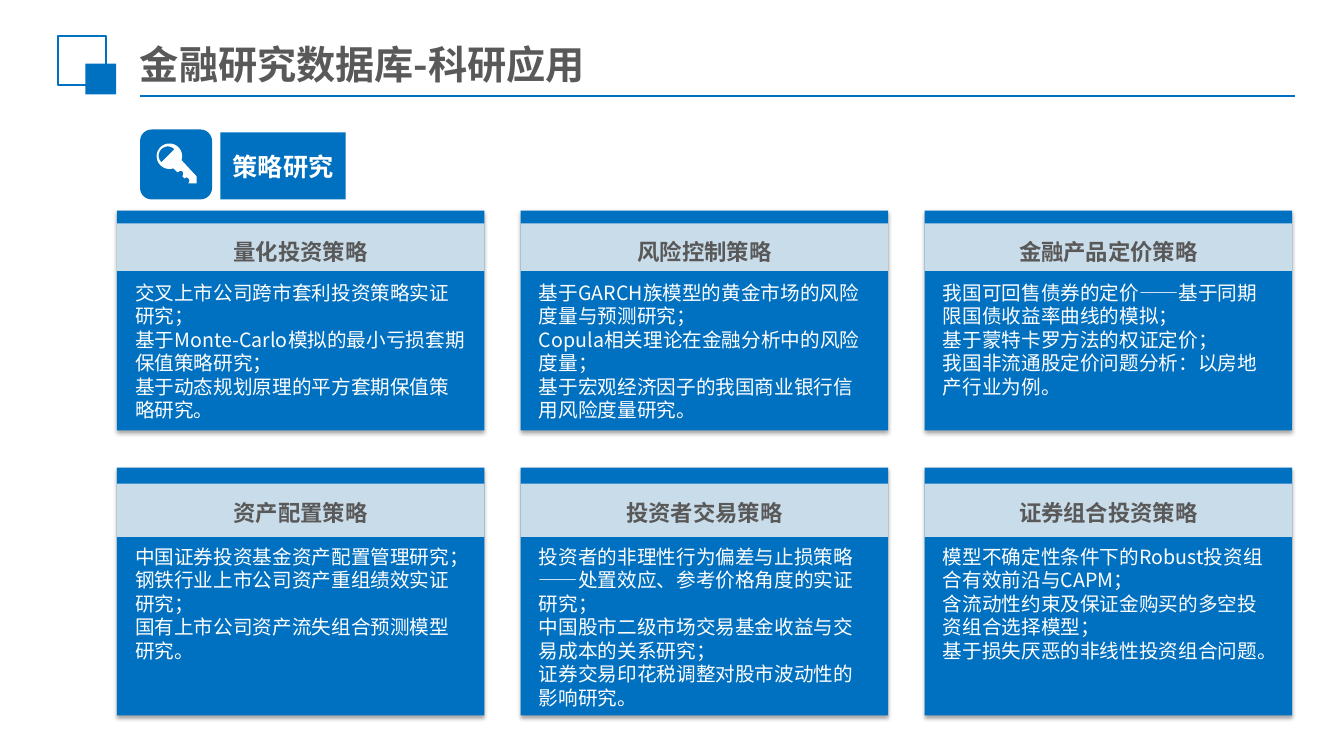
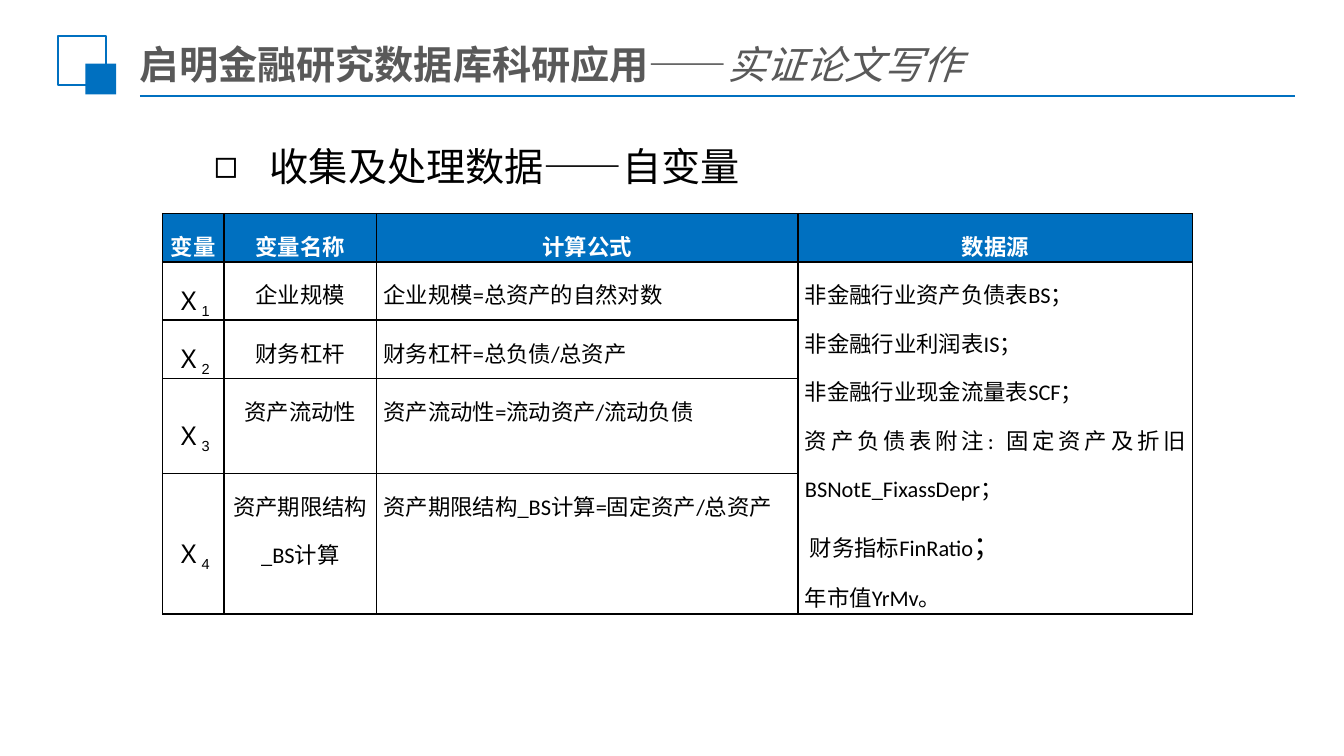
"""Build two slides on research uses of a financial database."""
from dataclasses import dataclass
from math import cos, radians, sin

from lxml.etree import SubElement
from pptx import Presentation
from pptx.dml.color import RGBColor
from pptx.enum.shapes import MSO_CONNECTOR, MSO_SHAPE
from pptx.enum.text import MSO_ANCHOR, MSO_AUTO_SIZE, PP_ALIGN
from pptx.oxml.ns import qn
from pptx.util import Pt


@dataclass(frozen=True)
class Theme:
    blue: RGBColor = RGBColor(0x00, 0x70, 0xC0)
    grey: RGBColor = RGBColor(0x59, 0x59, 0x59)
    pale: RGBColor = RGBColor(0xF2, 0xF2, 0xF2)
    white: RGBColor = RGBColor(0xFF, 0xFF, 0xFF)
    black: RGBColor = RGBColor(0x00, 0x00, 0x00)
    chinese: str = "Noto Sans CJK SC"
    serif: str = "Times New Roman"
    table: str = "Calibri"
    symbol: str = "Arial"
    title_size: int = 28
    label_size: int = 18
    heading_size: int = 16
    body_size: int = 14
    emphasis_size: int = 20


theme = Theme()


def add_run(paragraph, text, size, color, bold=False, italic=False, font=theme.chinese):
    run = paragraph.add_run()
    run.text = text
    run.font.size = Pt(size)
    run.font.bold = bold
    run.font.italic = italic
    run.font.color.rgb = color
    run.font.name = font
    SubElement(run.font._element, qn("a:ea")).set("typeface", theme.chinese)
    return run


def add_block(slide, kind, left, top, width, height, fill=None):
    shape = slide.shapes.add_shape(kind, Pt(left), Pt(top), Pt(width), Pt(height))
    shape.shadow.inherit = False
    shape.line.fill.background()
    if fill is None:
        shape.fill.background()
    else:
        shape.fill.solid()
        shape.fill.fore_color.rgb = fill
    shape.text_frame.word_wrap = True
    return shape


presentation = Presentation()
presentation.slide_width = Pt(960)
presentation.slide_height = Pt(540)
master = presentation.slide_master
strategy_slide = presentation.slides.add_slide(presentation.slide_layouts[5])
variable_slide = presentation.slides.add_slide(presentation.slide_layouts[1])

master_title = master.placeholders[0]
master_title.left, master_title.top = Pt(95), Pt(28)
master_title.width, master_title.height = Pt(619), Pt(35)
master_title.text_frame.auto_size = MSO_AUTO_SIZE.NONE
master_title.text_frame.vertical_anchor = MSO_ANCHOR.MIDDLE
master_title.text_frame.margin_left = master_title.text_frame.margin_right = Pt(5)
master_title.text_frame.margin_top = master_title.text_frame.margin_bottom = Pt(3)

rule = strategy_slide.shapes.add_connector(
    MSO_CONNECTOR.STRAIGHT, Pt(100), Pt(68.6), Pt(925), Pt(68.6))
rule.line.color.rgb = theme.blue
rule.line.width = Pt(1.25)
SubElement(rule.element.spPr, qn("a:effectLst"))
outline_square = add_block(strategy_slide, MSO_SHAPE.RECTANGLE, 41.5, 26, 34.5, 35)
outline_square.line.color.rgb = theme.blue
outline_square.line.width = Pt(1.5)
solid_square = add_block(strategy_slide, MSO_SHAPE.RECTANGLE, 61, 45.5, 22, 22, theme.blue)
for number, shape in enumerate((rule, outline_square, solid_square), 101):
    shape.element.xpath(".//p:cNvPr")[0].set("id", str(number))
    master.shapes.element.append(shape.element)

titles = [
    (strategy_slide, [("金融研究数据库-科研应用", True, False, theme.chinese)]),
    (variable_slide, [("启明金融研究数据库科研应用", True, False, theme.chinese),
                      ("——", False, False, theme.chinese),
                      ("实证论文写作", False, True, theme.serif)]),
]
for slide, runs in titles:
    paragraph = slide.shapes.title.text_frame.paragraphs[0]
    paragraph.alignment = PP_ALIGN.LEFT
    for text, bold, italic, font in runs:
        add_run(paragraph, text, theme.title_size, theme.grey, bold, italic, font)

label = add_block(strategy_slide, MSO_SHAPE.RECTANGLE, 157.5, 94.5, 89.5, 48, theme.blue)
label.text_frame.margin_left = label.text_frame.margin_right = Pt(0)
label.text_frame.paragraphs[0].alignment = PP_ALIGN.CENTER
add_run(label.text_frame.paragraphs[0], "策略研究", theme.label_size, theme.white, True)
add_block(strategy_slide, MSO_SHAPE.ROUNDED_RECTANGLE, 100, 92.5, 51.5, 50, theme.blue)

key_head = [(121 + 9.1 * cos(radians(angle)), 111.6 + 9.1 * sin(radians(angle)))
            for angle in range(18, -289, -9)]
key_shaft = [(126.7, 123.1), (128.9, 121.9), (130.3, 122.4), (131, 123.8),
             (130.3, 126), (131.8, 127.4), (133.2, 126.7), (134.6, 127.4),
             (135.4, 128.9), (134.6, 131), (140.4, 131), (140.4, 126)]
key_hole = [(119.9 + 6.6 * cos(radians(angle)), 111.2 + 6.6 * sin(radians(angle)))
            for angle in range(-225, -44, 9)]
key_outline, key_gap = [[(Pt(x), Pt(y)) for x, y in points]
                        for points in (key_head + key_shaft, key_hole)]
builder = strategy_slide.shapes.build_freeform(*key_outline[0])
builder.add_line_segments(key_outline[1:], close=True)
builder.move_to(*key_gap[0])
builder.add_line_segments(key_gap[1:], close=True)
key = builder.convert_to_shape()
key.shadow.inherit = False
key.fill.solid()
key.fill.fore_color.rgb = theme.white
key.line.fill.background()

card_rows = [
    (150.5, 157, 9, 34, 50, [
        ("量化投资策略", ["交叉上市公司跨市套利投资策略实证研究；",
                    "基于Monte-Carlo模拟的最小亏损套期保值策略研究；",
                    "基于动态规划原理的平方套期保值策略研究。"]),
        ("风险控制策略", ["基于GARCH族模型的黄金市场的风险度量与预测研究；",
                    "Copula相关理论在金融分析中的风险度量；",
                    "基于宏观经济因子的我国商业银行信用风险度量研究。"]),
        ("金融产品定价策略", ["我国可回售债券的定价——基于同期限国债收益率曲线的模拟；",
                      "基于蒙特卡罗方法的权证定价；",
                      "我国非流通股定价问题分析：以房地产行业为例。"]),
    ]),
    (334, 177, 11.5, 38, 55, [
        ("资产配置策略", ["中国证券投资基金资产配置管理研究；",
                    "钢铁行业上市公司资产重组绩效实证研究；",
                    "国有上市公司资产流失组合预测模型研究。"]),
        ("投资者交易策略", ["投资者的非理性行为偏差与止损策略——处置效应、参考价格角度的实证研究；",
                     "中国股市二级市场交易基金收益与交易成本的关系研究；",
                     "证券交易印花税调整对股市波动性的影响研究。"]),
        ("证券组合投资策略", ["模型不确定性条件下的Robust投资组合有效前沿与CAPM；",
                      "含流动性约束及保证金购买的多空投资组合选择模型；",
                      "基于损失厌恶的非线性投资组合问题。"]),
    ]),
]
card_width, card_step = 262.5, 288.5
for top, height, band_offset, band_height, text_offset, cards in card_rows:
    for column, (heading, topics) in enumerate(cards):
        left = 83.5 + column * card_step
        card = add_block(strategy_slide, MSO_SHAPE.RECTANGLE,
                         left, top, card_width, height, theme.blue)
        effects = card.element.spPr.find(qn("a:effectLst"))
        shadow = SubElement(effects, qn("a:outerShdw"), blurRad=str(Pt(3.1)),
                            dist=str(Pt(1.8)), dir="5400000", rotWithShape="0")
        shadow_color = SubElement(shadow, qn("a:srgbClr"), val=str(theme.black))
        SubElement(shadow_color, qn("a:alpha"), val="35000")
        frame = card.text_frame
        frame.vertical_anchor = MSO_ANCHOR.TOP
        frame.margin_left = frame.margin_right = Pt(13)
        frame.margin_top, frame.margin_bottom = Pt(text_offset), Pt(0)
        for index, topic in enumerate(topics):
            paragraph = frame.add_paragraph() if index else frame.paragraphs[0]
            paragraph.alignment = PP_ALIGN.LEFT
            paragraph.line_spacing = Pt(16.8)
            add_run(paragraph, topic, theme.body_size, theme.white)

        band = add_block(strategy_slide, MSO_SHAPE.RECTANGLE, left, top + band_offset,
                         card_width, band_height, theme.pale)
        band_color = band.element.spPr.find(qn("a:solidFill"))[0]
        SubElement(band_color, qn("a:alpha"), val="83000")
        band.text_frame.vertical_anchor = MSO_ANCHOR.TOP
        band.text_frame.margin_top = Pt(4)
        paragraph = band.text_frame.paragraphs[0]
        paragraph.alignment = PP_ALIGN.CENTER
        paragraph.line_spacing = Pt(26)
        add_run(paragraph, heading, theme.heading_size, theme.grey, True)

body = variable_slide.placeholders[1]
body.left, body.top, body.width, body.height = Pt(145.5), Pt(94.5), Pt(672.5), Pt(45)
body.text_frame.auto_size = MSO_AUTO_SIZE.NONE
paragraph = body.text_frame.paragraphs[0]
properties = paragraph._p.get_or_add_pPr()
properties.set("marL", str(Pt(40)))
properties.set("indent", str(Pt(-40)))
SubElement(properties, qn("a:buFont"), typeface=theme.symbol)
SubElement(properties, qn("a:buChar"), char="◻")
paragraph.space_before = Pt(0)
paragraph.line_spacing = Pt(37)
add_run(paragraph, "收集及处理数据——自变量", theme.title_size, theme.black)

headers = ["变量", "变量名称", "计算公式", "数据源"]
variables = [
    ("企业规模", "企业规模=总资产的自然对数"),
    ("财务杠杆", "财务杠杆=总负债/总资产"),
    ("资产流动性", "资产流动性=流动资产/流动负债"),
    ("资产期限结构_BS计算", "资产期限结构_BS计算=固定资产/总资产"),
]
sources = ["非金融行业资产负债表BS；", "非金融行业利润表IS；", "非金融行业现金流量表SCF；",
           "资产负债表附注: 固定资产及折旧 BSNotE_FixassDepr；",
           " 财务指标FinRatio", "年市值YrMv。"]
column_widths = [44, 109, 301, 282]
row_heights = [34.5, 41.5, 41.5, 68, 100.5]
table = variable_slide.shapes.add_table(
    len(row_heights), len(column_widths), Pt(116), Pt(152.5),
    Pt(sum(column_widths)), Pt(sum(row_heights))).table
table.first_row = False
table.horz_banding = False
for column, width in zip(table.columns, column_widths):
    column.width = Pt(width)
for row, height in zip(table.rows, row_heights):
    row.height = Pt(height)
table.cell(1, 3).merge(table.cell(4, 3))

for row_index in range(len(row_heights)):
    for column_index in range(len(column_widths)):
        cell = table.cell(row_index, column_index)
        cell.margin_left = cell.margin_right = Pt(5)
        cell.margin_top = cell.margin_bottom = Pt(0)
        for side in ("lnL", "lnR", "lnT", "lnB"):
            border = SubElement(cell._tc.get_or_add_tcPr(), qn(f"a:{side}"), w=str(Pt(1)))
            border_fill = SubElement(border, qn("a:solidFill"))
            SubElement(border_fill, qn("a:srgbClr"), val=str(theme.black))
        if row_index == 0:
            cell.fill.solid()
            cell.fill.fore_color.rgb = theme.blue
        else:
            cell.fill.background()
        if cell.is_spanned:
            continue
        if row_index == 0:
            lines = [headers[column_index]]
        elif column_index == 0:
            lines = ["Ｘ"]
            cell.vertical_anchor = MSO_ANCHOR.MIDDLE
        elif column_index == 3:
            lines = sources
        else:
            lines = [variables[row_index - 1][column_index - 1]]
        centred = row_index == 0 or column_index < 2
        for index, line in enumerate(lines):
            frame = cell.text_frame
            paragraph = frame.add_paragraph() if index else frame.paragraphs[0]
            paragraph.alignment = PP_ALIGN.CENTER if centred else PP_ALIGN.JUSTIFY
            paragraph.line_spacing = 1.5
            if row_index == 0:
                add_run(paragraph, line, theme.heading_size, theme.white, True,
                        font=theme.table)
            elif column_index == 0:
                add_run(paragraph, line, theme.label_size, theme.black, font=theme.symbol)
                subscript = add_run(paragraph, str(row_index), theme.label_size,
                                    theme.black, font=theme.symbol)
                subscript.font._element.set("baseline", "-25000")
            else:
                add_run(paragraph, line, theme.heading_size, theme.black, font=theme.table)
            if line.endswith("FinRatio"):
                add_run(paragraph, "；", theme.emphasis_size, theme.black, font=theme.table)

presentation.save("out.pptx")
